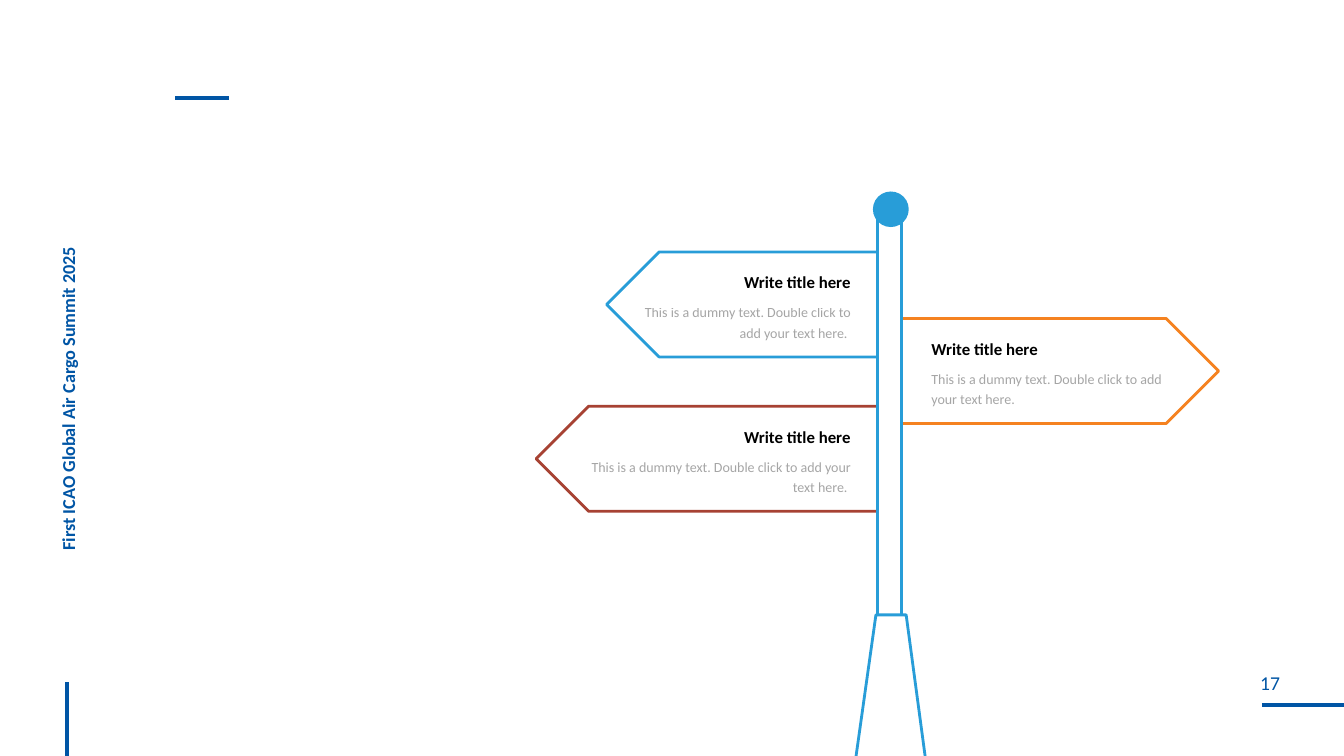
"""Build a signpost slide with three direction signs and summit branding."""
from dataclasses import dataclass

from lxml import etree
from pptx import Presentation
from pptx.dml.color import RGBColor
from pptx.enum.shapes import MSO_CONNECTOR, MSO_SHAPE
from pptx.enum.text import MSO_ANCHOR, PP_ALIGN
from pptx.oxml.ns import qn
from pptx.util import Pt

STRAIGHT = MSO_CONNECTOR.STRAIGHT
PENTAGON, RECTANGLE, OVAL = MSO_SHAPE.PENTAGON, MSO_SHAPE.RECTANGLE, MSO_SHAPE.OVAL
MIDDLE = MSO_ANCHOR.MIDDLE
LEFT, CENTER, RIGHT = PP_ALIGN.LEFT, PP_ALIGN.CENTER, PP_ALIGN.RIGHT

FONT = "Calibri"
NAVY, BLUE, RED, ORANGE = "0055A5", "289DD8", "A74233", "F58220"
WHITE, BLACK, GRAY = "FFFFFF", "000000", "808080"
SIGN_HEIGHT = 75
SIGN_TITLE = "Write title here"
SIGN_TEXT = "This is a dummy text. Double click to add your text here."


@dataclass
class Sign:
    left: float
    top: float
    width: float
    color: str
    points_left: bool


@dataclass
class Rule:
    start: tuple[float, float]
    end: tuple[float, float]


@dataclass
class Label:
    text: str
    box: tuple[float, float, float, float]
    size: float
    bold: bool
    align: PP_ALIGN
    inset: tuple[float, float, float, float]
    wrap: bool
    rotation: float = 0
    line_spacing: float = 1


SIGNS = [
    Sign(433.4, 180, 196.6, BLUE, True),
    Sign(383, 290.2, 247, RED, True),
    Sign(643, 227.5, 227.5, ORANGE, False),
]
RULES = [
    Rule((901.4, 503.3), (960, 503.3)),
    Rule((47.6, 487.4), (47.6, 540)),
    Rule((125.3, 69.8), (163.4, 69.8)),
]
LABELS = [
    Label("17", (864, 479.5, 86.4, 23.8), 14, False, CENTER, (0, 0, 0, 0), False),
    Label("First ICAO Global Air Cargo Summit 2025", (-134.6, 203.8, 370, 23), 13,
          True, LEFT, (7.2, 3.6, 7.2, 3.6), True, 270, 0.9),
]
BASE_OUTLINE = [(647.3, 439.2), (661, 541.4), (611.3, 541.4), (625.7, 439.2)]


def rgb(color: str) -> RGBColor:
    return RGBColor.from_string(color)


def set_insets(frame, inset: tuple[float, float, float, float]) -> None:
    (frame.margin_left, frame.margin_top,
     frame.margin_right, frame.margin_bottom) = map(Pt, inset)


def format_paragraph(paragraph, text: str, size: float, color: str, bold: bool,
                     align: PP_ALIGN, line_spacing: float) -> None:
    paragraph.text = text
    paragraph.alignment = align
    paragraph.line_spacing = line_spacing
    font = paragraph.font
    font.name, font.size, font.bold = FONT, Pt(size), bold
    font.color.rgb = rgb(color)


def style_shape(shape, fill: str, line: str | None = None) -> None:
    shape.shadow.inherit = False
    shape.fill.solid()
    shape.fill.fore_color.rgb = rgb(fill)
    if line:
        shape.line.color.rgb = rgb(line)
        shape.line.width = Pt(2)
    else:
        shape.line.fill.background()


def add_rule(slide, rule: Rule) -> None:
    connector = slide.shapes.add_connector(STRAIGHT, *map(Pt, rule.start + rule.end))
    connector.line.color.rgb = rgb(NAVY)
    connector.line.width = Pt(3)
    etree.SubElement(connector._element.spPr, qn("a:effectLst"))


def add_label(slide, label: Label) -> None:
    box = slide.shapes.add_textbox(*map(Pt, label.box))
    box.rotation = label.rotation
    frame = box.text_frame
    frame.word_wrap = label.wrap
    set_insets(frame, label.inset)
    format_paragraph(frame.paragraphs[0], label.text, label.size, NAVY,
                     label.bold, label.align, label.line_spacing)


def add_sign(slide, sign: Sign) -> None:
    shape = slide.shapes.add_shape(PENTAGON, Pt(sign.left), Pt(sign.top),
                                   Pt(sign.width), Pt(SIGN_HEIGHT))
    style_shape(shape, WHITE, sign.color)
    if sign.points_left:
        shape._element.spPr.xfrm.set("flipH", "1")
    frame = shape.text_frame
    frame.word_wrap = True
    frame.vertical_anchor = MIDDLE
    set_insets(frame, (5.8, 3.6, 22.3, 3.6) if sign.points_left else (22.3, 3.6, 7.2, 3.6))
    align = RIGHT if sign.points_left else LEFT
    body_text = SIGN_TEXT + " " if sign.points_left else SIGN_TEXT
    format_paragraph(frame.paragraphs[0], SIGN_TITLE, 12, BLACK, True, align, 1.2)
    body = frame.add_paragraph()
    format_paragraph(body, body_text, 10, GRAY, False, align, 1.2)
    body.space_before = Pt(6)
    for color in body._p.iter(qn("a:srgbClr")):
        etree.SubElement(color, qn("a:alpha")).set("val", "70000")


def add_post(slide) -> None:
    pole = slide.shapes.add_shape(RECTANGLE, Pt(627.1), Pt(154), Pt(16.6), Pt(292.3))
    style_shape(pole, WHITE, BLUE)
    corners = [(Pt(x), Pt(y)) for x, y in BASE_OUTLINE]
    builder = slide.shapes.build_freeform(*corners[0])
    builder.add_line_segments(corners[1:], close=True)
    style_shape(builder.convert_to_shape(), WHITE, BLUE)
    ball = slide.shapes.add_shape(OVAL, Pt(623.5), Pt(136.8), Pt(25.6), Pt(25.4))
    style_shape(ball, BLUE)


def main() -> None:
    presentation = Presentation()
    presentation.slide_width, presentation.slide_height = Pt(960), Pt(540)
    slide = presentation.slides.add_slide(presentation.slide_layouts[6])
    for rule in RULES:
        add_rule(slide, rule)
    for label in LABELS:
        add_label(slide, label)
    for sign in SIGNS:
        add_sign(slide, sign)
    add_post(slide)
    presentation.save("out.pptx")


if __name__ == "__main__":
    main()
